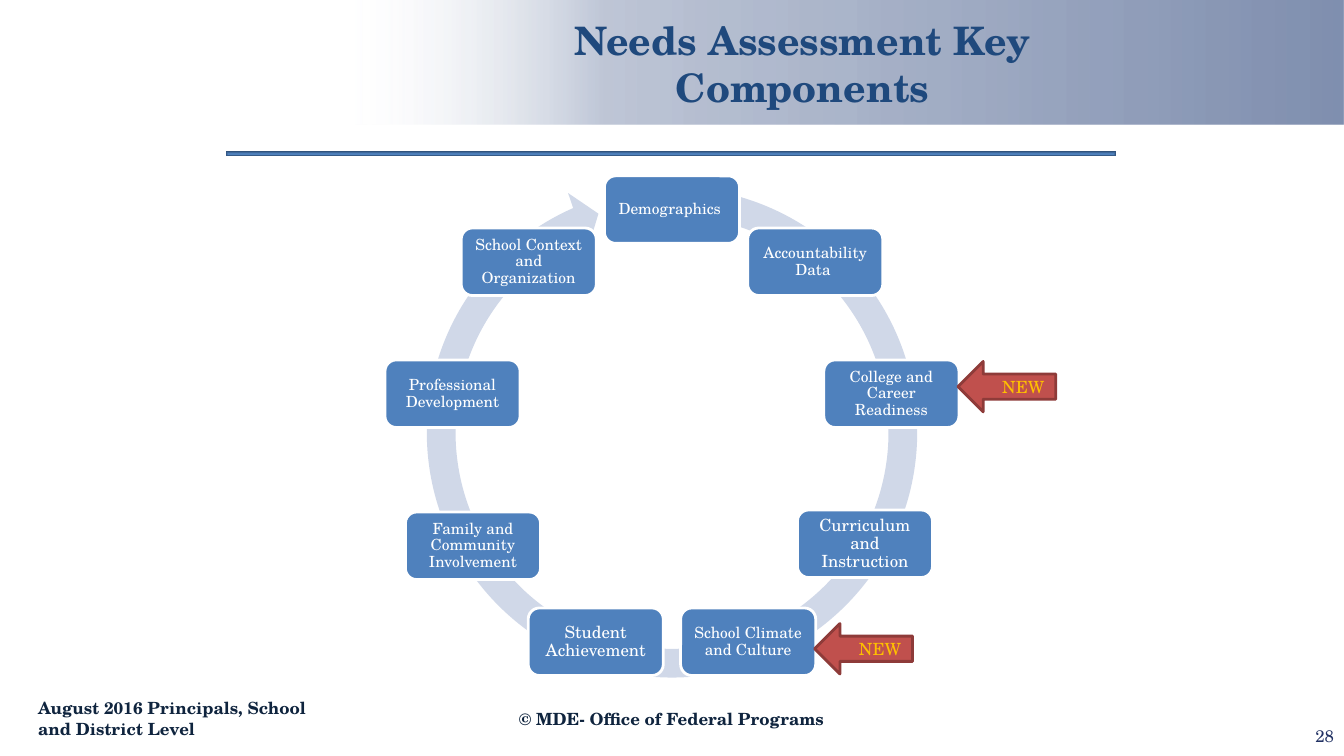
"""Build the needs assessment slide: a ring of nine components, two marked as new."""
from math import cos, radians, sin

from lxml.etree import SubElement
from pptx import Presentation
from pptx.dml.color import RGBColor
from pptx.enum.shapes import MSO_SHAPE as Preset
from pptx.enum.text import MSO_ANCHOR as Anchor, MSO_AUTO_SIZE as AutoSize, PP_ALIGN as Align
from pptx.oxml.ns import qn
from pptx.util import Inches, Pt

TITLE = "Needs Assessment Key Components"
COMPONENTS = [
    ("Demographics", 11),
    ("Accountability Data", 11),
    ("College and Career Readiness", 11),
    ("Curriculum and Instruction", 12),
    ("School Climate and Culture", 11),
    ("Student Achievement", 12),
    ("Family and Community Involvement", 11),
    ("Professional Development", 11),
    ("School Context and Organization", 11),
]
NUDGES = {"Family and Community Involvement": (-0.06, 0.02)}
NEW_COMPONENTS = ["College and Career Readiness", "School Climate and Culture"]
NEW_DROPS = [-0.07, 0.07]
FOOTERS = [
    ("August 2016 Principals, School and District Level", (0.28, 6.85, 2.87, 0.55),
     Align.LEFT, "footer", True),
    ("28", (10.22, 7.1, 3.11, 0.4), Align.RIGHT, "number", False),
    ("© MDE- Office of Federal Programs", (4.55, 6.93, 4.22, 0.4),
     Align.CENTER, "footer", True),
]

FONT = "TeX Gyre Schola"
COLORS = {
    "title": "1F497D", "node": "4F81BD", "white": "FFFFFF", "ring": "D0D8E8",
    "new": "C0504D", "new_edge": "8E3B39", "new_text": "FFC000",
    "footer": "0F243E", "number": "223264", "band": "002060", "rule_edge": "2C4C74",
}
BAND_STOPS = [(0, "white", 0), (25, "white", 0), (45, "band", 25), (100, "band", 50)]
RULE_STOPS = [(0, "node", 100), (100, "rule_edge", 100)]
RING_ADJUSTMENTS = [0.055, 3.307, 147.542, 168.149, 0.058]

WIDTH, HEIGHT = 13.33, 7.5
CENTER_X, CENTER_Y = WIDTH / 2, 4.29
RADIUS, RING_SIZE = 2.21, 5.18
NODE_W, NODE_H = 1.34, 0.67
NEW_W, NEW_H = 0.97, 0.5

deck = Presentation()
deck.slide_width, deck.slide_height = Inches(WIDTH), Inches(HEIGHT)
slide = deck.slides.add_slide(deck.slide_layouts[5])
shapes = slide.shapes


def color(name):
    return RGBColor.from_string(COLORS[name])


def add_preset(preset, box, fill=None, edge=None):
    shape = shapes.add_shape(preset, *map(Inches, box))
    shape.shadow.inherit = False
    if fill:
        shape.fill.solid()
        shape.fill.fore_color.rgb = color(fill)
    if edge:
        shape.line.color.rgb = color(edge)
        shape.line.width = Pt(2)
    else:
        shape.line.fill.background()
    return shape


def fill_gradient(shape, stops, from_center=False):
    shape.fill.gradient()
    grad = shape.element.spPr.find(qn("a:gradFill"))
    for child in list(grad):
        grad.remove(child)
    stop_list = SubElement(grad, qn("a:gsLst"))
    for position, name, opacity in stops:
        stop = SubElement(stop_list, qn("a:gs"), pos=str(position * 1000))
        tint = SubElement(stop, qn("a:srgbClr"), val=COLORS[name])
        SubElement(tint, qn("a:alpha"), val=str(opacity * 1000))
    if from_center:
        focus = SubElement(grad, qn("a:path"), path="shape")
        SubElement(focus, qn("a:fillToRect"), {side: "50000" for side in "ltrb"})
    else:
        SubElement(grad, qn("a:lin"), ang="0", scaled="0")


def write(shape, text, size, ink, align, bold=False, spacing=None, inset=None):
    frame = shape.text_frame
    frame.text = text
    layout = {"word_wrap": True, "auto_size": AutoSize.NONE, "vertical_anchor": Anchor.MIDDLE}
    if inset is not None:
        layout.update({f"margin_{side}": Inches(inset)
                       for side in ("left", "right", "top", "bottom")})
    for name, value in layout.items():
        setattr(frame, name, value)
    paragraph = frame.paragraphs[0]
    paragraph.alignment = align
    if spacing:
        paragraph.line_spacing = spacing
    font = paragraph.runs[0].font
    for name, value in {"name": FONT, "size": Pt(size), "bold": bold}.items():
        setattr(font, name, value)
    font.color.rgb = color(ink)


def add_label(text, box, size, ink, align, bold=False):
    write(shapes.add_textbox(*map(Inches, box)), text, size, ink, align, bold)


band = add_preset(Preset.RECTANGLE, (0, -0.02, WIDTH, 1.25))
fill_gradient(band, BAND_STOPS)

ring = add_preset(Preset.CIRCULAR_ARROW,
                  (CENTER_X - RING_SIZE / 2, CENTER_Y - RING_SIZE / 2, RING_SIZE, RING_SIZE), "ring")
for index, value in enumerate(RING_ADJUSTMENTS):
    ring.adjustments[index] = value

node_corners = {}
for index, (component, size) in enumerate(COMPONENTS):
    angle = radians(index * 360 / len(COMPONENTS))
    shift_x, shift_y = NUDGES.get(component, (0, 0))
    left = CENTER_X + RADIUS * sin(angle) - NODE_W / 2 + shift_x
    top = CENTER_Y - RADIUS * cos(angle) - NODE_H / 2 + shift_y
    node_corners[component] = left, top
    node = add_preset(Preset.ROUNDED_RECTANGLE, (left, top, NODE_W, NODE_H), "node", "white")
    write(node, component + (" " if index < 2 else ""), size, "white", Align.CENTER,
          spacing=0.9, inset=0.05)

title = shapes.title
title.left, title.top, title.width, title.height = map(Inches, (4.67, 0.08, 6.58, 1.1))
write(title, TITLE, 28, "title", Align.CENTER, bold=True)
band.element.addnext(title.element)

rule = add_preset(Preset.RECTANGLE, (2.24, 1.5, 8.83, 0.05))
fill_gradient(rule, RULE_STOPS, from_center=True)

for component, drop in zip(NEW_COMPONENTS, NEW_DROPS):
    left, top = node_corners[component]
    tip = left + NODE_W - 0.01
    arrow_top = top + (NODE_H - NEW_H) / 2 + drop
    add_preset(Preset.LEFT_ARROW, (tip, arrow_top, NEW_W, NEW_H), "new", "new_edge")
    add_label("NEW", (tip + 0.34, arrow_top + 0.1, 0.63, 0.3), 12, "new_text", Align.LEFT)

for text, box, align, ink, bold in FOOTERS:
    add_label(text, box, 12, ink, align, bold)

deck.save("out.pptx")
